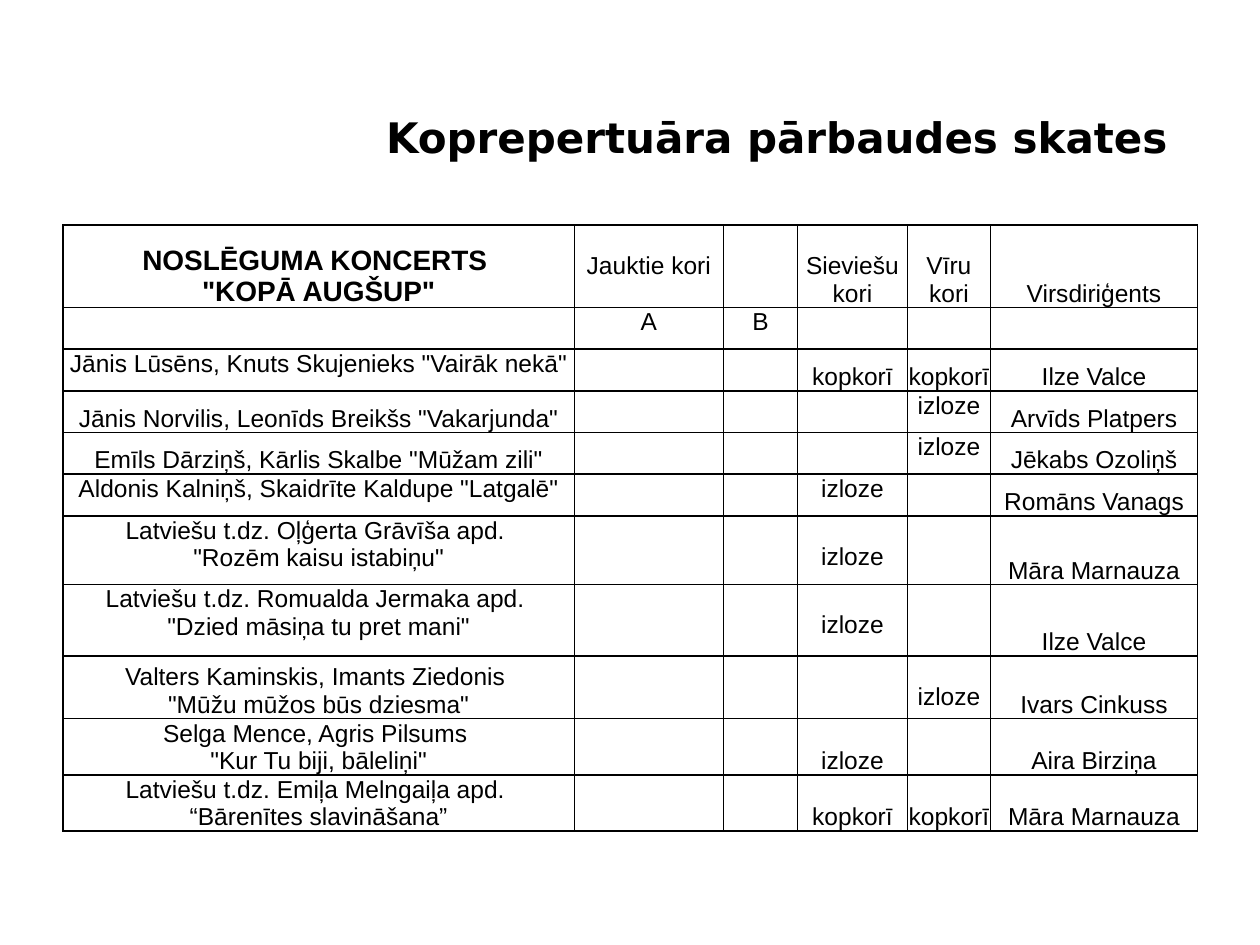
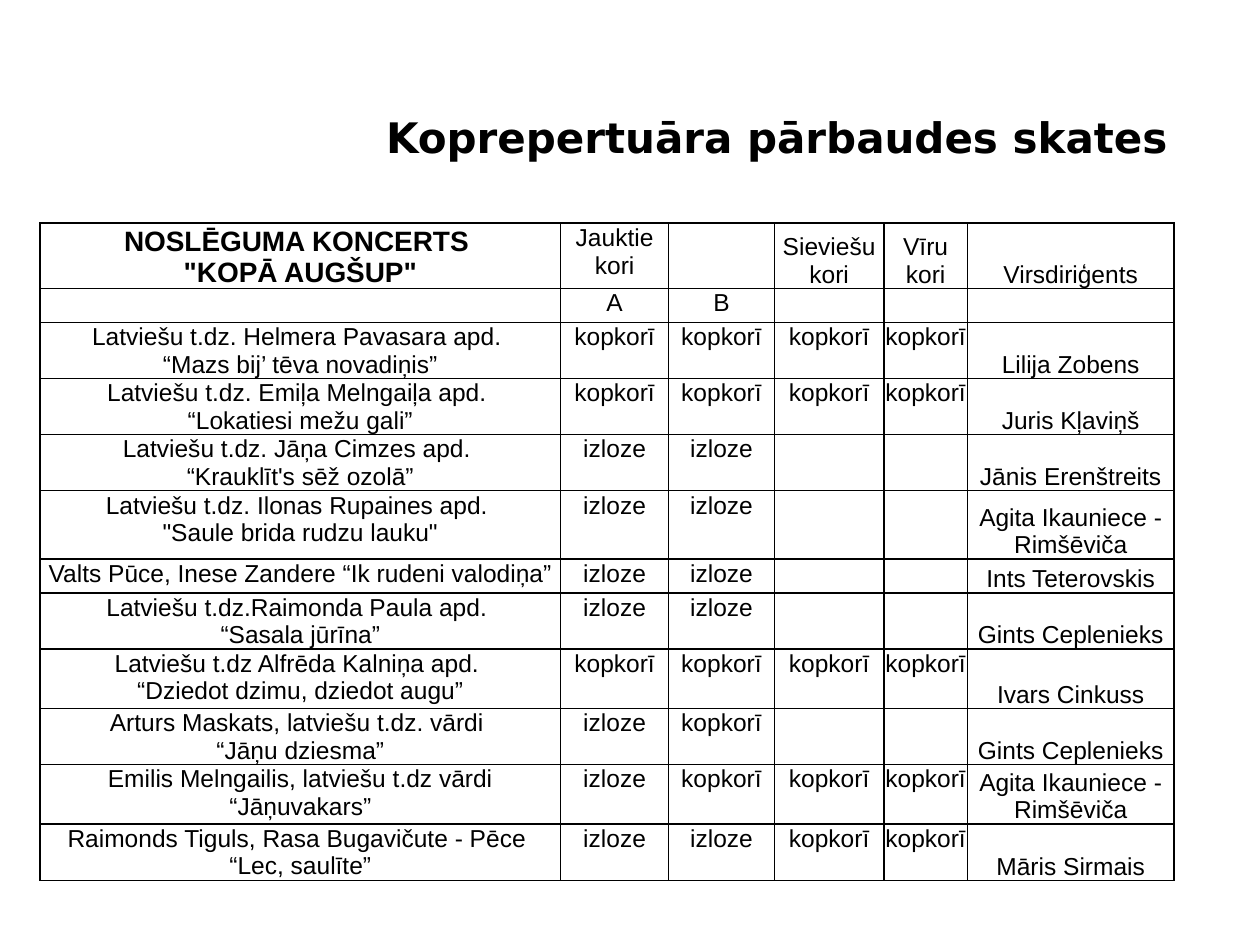
from dataclasses import dataclass

from lxml.etree import SubElement
from pptx import Presentation
from pptx.dml.color import RGBColor
from pptx.enum.text import MSO_ANCHOR as Anchor, PP_ALIGN as Align
from pptx.oxml.ns import qn
from pptx.util import Cm, Pt

COLORS = {"ink": "000000", "paper": "FFFFFF"}
TITLE = "Koprepertuāra pārbaudes skates"
TITLE_FONT, TABLE_FONT = "DejaVu Sans", "Arial"
TOP, BOTTOM, LOWERED = "top", "bottom", "lowered"
ONE_LINE = 0.55
ALL, DRAW = "kopkorī", "izloze"
EVERY_CHOIR = (ALL,) * 4
MIXED_DRAW = (DRAW, DRAW, "", "")
WOMEN_DRAW = ("", "", DRAW, "")
MEN_DRAW = ("", "", "", DRAW)
WOMEN_AND_MEN = ("", "", ALL, ALL)


@dataclass
class Song:
    name: str
    choirs: tuple[str, ...]
    conductor: str
    height: float
    name_at: str = TOP
    choirs_at: str = TOP


@dataclass
class Programme:
    left: float
    top: float
    widths: tuple[float, ...]
    header_heights: tuple[float, float]
    mixed_at: str
    songs: list[Song]


PROGRAMMES = [
    Programme(1.27, 4.54, (10.31, 3, 1.5, 2.21, 1.68, 4.17), (1.66, 0.84), LOWERED, [
        Song('Jānis Lūsēns, Knuts Skujenieks "Vairāk nekā"', WOMEN_AND_MEN,
             "Ilze Valce", 0.84, choirs_at=BOTTOM),
        Song('Jānis Norvilis, Leonīds Breikšs "Vakarjunda"', MEN_DRAW,
             "Arvīds Platpers", 0.84, name_at=BOTTOM),
        Song('Emīls Dārziņš, Kārlis Skalbe "Mūžam zili"', MEN_DRAW,
             "Jēkabs Ozoliņš", 0.84, name_at=BOTTOM),
        Song('Aldonis Kalniņš, Skaidrīte Kaldupe "Latgalē"', WOMEN_DRAW,
             "Romāns Vanags", 0.84),
        Song('Latviešu t.dz. Oļģerta Grāvīša apd. \n"Rozēm kaisu istabiņu"', WOMEN_DRAW,
             "Māra Marnauza", 1.38, choirs_at=LOWERED),
        Song('Latviešu t.dz. Romualda Jermaka apd. \n"Dzied māsiņa tu pret mani"', WOMEN_DRAW,
             "Ilze Valce", 1.45, choirs_at=LOWERED),
        Song('Valters Kaminskis, Imants Ziedonis \n"Mūžu mūžos būs dziesma"', MEN_DRAW,
             "Ivars Cinkuss", 1.26, BOTTOM, LOWERED),
        Song('Selga Mence, Agris Pilsums \n"Kur Tu biji, bāleliņi"', WOMEN_DRAW,
             "Aira Birziņa", 1.12, BOTTOM, BOTTOM),
        Song("Latviešu t.dz. Emiļa Melngaiļa apd. \n“Bārenītes slavināšana”", WOMEN_AND_MEN,
             "Māra Marnauza", 1.12, choirs_at=BOTTOM),
    ]),
    Programme(0.81, 4.5, (10.49, 2.18, 2.13, 2.21, 1.68, 4.17), (1.32, 0.68), TOP, [
        Song("Latviešu t.dz. Helmera Pavasara apd. \n“Mazs bij’ tēva novadiņis”", EVERY_CHOIR,
             "Lilija Zobens", 1.12),
        Song("Latviešu t.dz. Emiļa Melngaiļa apd. \n“Lokatiesi mežu gali”", EVERY_CHOIR,
             "Juris Kļaviņš", 1.12),
        Song("Latviešu t.dz. Jāņa Cimzes apd. \n“Krauklīt's sēž ozolā”", MIXED_DRAW,
             "Jānis Erenštreits", 1.12),
        Song('Latviešu t.dz. Ilonas Rupaines apd. \n"Saule brida rudzu lauku"', MIXED_DRAW,
             "Agita Ikauniece - Rimšēviča", 1.38),
        Song("Valts Pūce, Inese Zandere “Ik rudeni valodiņa”", MIXED_DRAW,
             "Ints Teterovskis", 0.68),
        Song("Latviešu t.dz.Raimonda Paula apd. \n“Sasala jūrīna”", MIXED_DRAW,
             "Gints Ceplenieks", 1.12),
        Song("Latviešu t.dz Alfrēda Kalniņa apd. \n“Dziedot dzimu, dziedot augu”", EVERY_CHOIR,
             "Ivars Cinkuss", 1.2),
        Song("Arturs Maskats, latviešu t.dz. vārdi \n“Jāņu dziesma”", (DRAW, ALL, "", ""),
             "Gints Ceplenieks", 1.12),
        Song("Emilis Melngailis, latviešu t.dz vārdi “Jāņuvakars”", (DRAW, ALL, ALL, ALL),
             "Agita Ikauniece - Rimšēviča", 1.2),
        Song("Raimonds Tiguls, Rasa Bugavičute - Pēce \n“Lec, saulīte”", (DRAW, DRAW, ALL, ALL),
             "Māris Sirmais", 1.12),
    ]),
]


def style_paragraph(p, font: str, size: int, bold: bool) -> None:
    p.alignment = Align.CENTER
    for r in p.runs:
        r.font.name, r.font.size, r.font.bold = font, Pt(size), bold
        r.font.color.rgb = RGBColor.from_string(COLORS["ink"])
    if not p.runs:
        SubElement(p._p, qn("a:endParaRPr"), sz=str(size * 100))


def add_title(slide) -> None:
    sp = slide.shapes.title
    sp.left, sp.top, sp.width, sp.height = Cm(7.19), Cm(1.07), Cm(16.94), Cm(3.28)
    tf = sp.text_frame
    tf.text = TITLE
    tf.word_wrap = True
    tf.vertical_anchor = Anchor.MIDDLE
    tf.margin_left = tf.margin_right = tf.margin_bottom = Cm(0.13)
    tf.margin_top = Cm(0.23)
    style_paragraph(tf.paragraphs[0], TITLE_FONT, 24, True)


def add_borders(cell) -> None:
    props = cell._tc.get_or_add_tcPr()
    for side in ("lnL", "lnR", "lnT", "lnB"):
        line = SubElement(props, qn(f"a:{side}"), w=str(Pt(1)))
        fill = SubElement(line, qn("a:solidFill"))
        SubElement(fill, qn("a:srgbClr"), val=COLORS["ink"])


def fill_cell(cell, text: str, place: str, size: int = 14, bold: bool = False) -> None:
    add_borders(cell)
    cell.fill.background()
    cell.margin_left = cell.margin_right = Cm(0.02)
    cell.margin_top = Cm(ONE_LINE if place == LOWERED and text else 0.02)
    cell.margin_bottom = 0
    cell.vertical_anchor = Anchor.BOTTOM if place == BOTTOM else Anchor.TOP
    cell.text_frame.text = text
    for p in cell.text_frame.paragraphs:
        style_paragraph(p, TABLE_FONT, size, bold)


def add_programme(slide, prog: Programme) -> None:
    heights = [*prog.header_heights, *(song.height for song in prog.songs)]
    table = slide.shapes.add_table(
        len(heights), len(prog.widths), Cm(prog.left), Cm(prog.top),
        Cm(sum(prog.widths)), Cm(sum(heights))).table
    table.first_row = table.horz_banding = False
    for column, width in zip(table.columns, prog.widths):
        column.width = Cm(width)
    for row, height in zip(table.rows, heights):
        row.height = Cm(height)

    fill_cell(table.cell(0, 0), 'NOSLĒGUMA KONCERTS \n"KOPĀ AUGŠUP"', BOTTOM, 16, True)
    fill_cell(table.cell(0, 1), "Jauktie kori", prog.mixed_at)
    for col, text in enumerate(("", "Sieviešu kori", "Vīru kori", "Virsdiriģents"), 2):
        fill_cell(table.cell(0, col), text, BOTTOM)
    for col, text in enumerate(("", "A", "B", "", "", "")):
        fill_cell(table.cell(1, col), text, TOP)

    for row, song in enumerate(prog.songs, 2):
        fill_cell(table.cell(row, 0), song.name, song.name_at)
        for col, mark in enumerate(song.choirs, 1):
            fill_cell(table.cell(row, col), mark, song.choirs_at)
        fill_cell(table.cell(row, 5), song.conductor, BOTTOM)


def main() -> None:
    prs = Presentation()
    prs.slide_width, prs.slide_height = Cm(25.4), Cm(19.05)
    background = prs.slide_master.background.fill
    background.solid()
    background.fore_color.rgb = RGBColor.from_string(COLORS["paper"])
    for prog in PROGRAMMES:
        slide = prs.slides.add_slide(prs.slide_layouts[5])
        add_title(slide)
        add_programme(slide, prog)
    prs.save("out.pptx")


if __name__ == "__main__":
    main()
